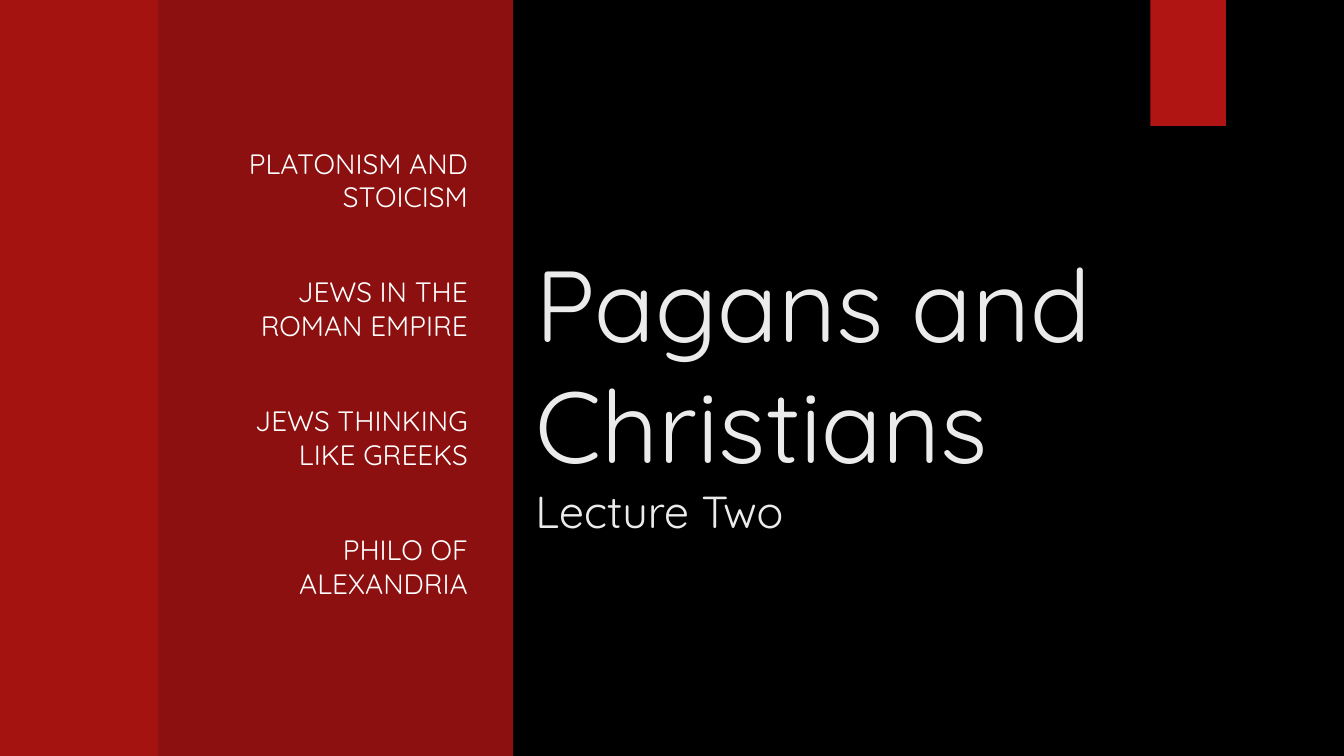
from pptx import Presentation
from pptx.dml.color import RGBColor
from pptx.enum.shapes import MSO_SHAPE as Shape
from pptx.enum.text import MSO_ANCHOR as Anchor, MSO_AUTO_SIZE as Fit, PP_ALIGN as Align
from pptx.util import Inches, Pt
from lxml.etree import SubElement
from pptx.oxml.ns import qn

COLORS = {"black": "000000", "red": "B01513", "title": "EBEBEB", "topic": "FFFFFF"}
WIDTH, HEIGHT = 13.33, 7.5
TEXT_TOP, TEXT_HEIGHT = 1.39, 4.95
TOPICS = ["PLATONISM AND STOICISM", "JEWS IN THE ROMAN EMPIRE",
          "JEWS THINKING LIKE GREEKS", "PHILO OF ALEXANDRIA"]


def add_span(para, text, size, color):
    span = para.add_run()
    span.text = text
    for name, value in {"name": "Quicksand", "size": Pt(size), "bold": False}.items():
        setattr(span.font, name, value)
    span.font.color.rgb = RGBColor.from_string(COLORS[color])


deck = Presentation()
deck.slide_width, deck.slide_height = Inches(WIDTH), Inches(HEIGHT)
slide = deck.slides.add_slide(deck.slide_layouts[5])
slide.background.fill.solid()
slide.background.fill.fore_color.rgb = RGBColor.from_string(COLORS["black"])

panels = [
    (0, WIDTH, HEIGHT, "black", 100),
    (0, 5.09, HEIGHT, "red", 80),
    (0, 1.57, HEIGHT, "red", 70),
    (11.41, 0.75, HEIGHT / 6, "red", 100),
]
for left, width, height, color, opacity in panels:
    panel = slide.shapes.add_shape(
        Shape.RECTANGLE, Inches(left), 0, Inches(width), Inches(height))
    panel.shadow.inherit = False
    panel.line.fill.background()
    panel.fill.solid()
    panel.fill.fore_color.rgb = RGBColor.from_string(COLORS[color])
    if opacity < 100:
        tint = panel.element.spPr.find(f".//{qn('a:srgbClr')}")
        SubElement(tint, qn("a:alpha"), val=str(opacity * 1000))

title = slide.shapes.title
title.element.getparent().append(title.element)
topics = slide.shapes.add_textbox(0, 0, Inches(1), Inches(1))
for box, left, width in [(title, 5.21, 7.9), (topics, 1.93, 2.81)]:
    place = {"left": left, "top": TEXT_TOP, "width": width, "height": TEXT_HEIGHT}
    for name, value in place.items():
        setattr(box, name, Inches(value))
    frame = {"word_wrap": True, "auto_size": Fit.NONE, "vertical_anchor": Anchor.MIDDLE}
    for name, value in frame.items():
        setattr(box.text_frame, name, value)

para = title.text_frame.paragraphs[0]
para.alignment = Align.LEFT
add_span(para, "Pagans and Christians", 72, "title")
para.add_line_break()
add_span(para, "Lecture Two", 32, "title")

topics.text_frame.margin_bottom = Inches(0.38)
for index, topic in enumerate(TOPICS):
    para = topics.text_frame.add_paragraph() if index else topics.text_frame.paragraphs[0]
    para.alignment = Align.RIGHT
    para.space_before = Pt(44 if index else 0)
    add_span(para, topic, 20, "topic")

deck.save("out.pptx")
